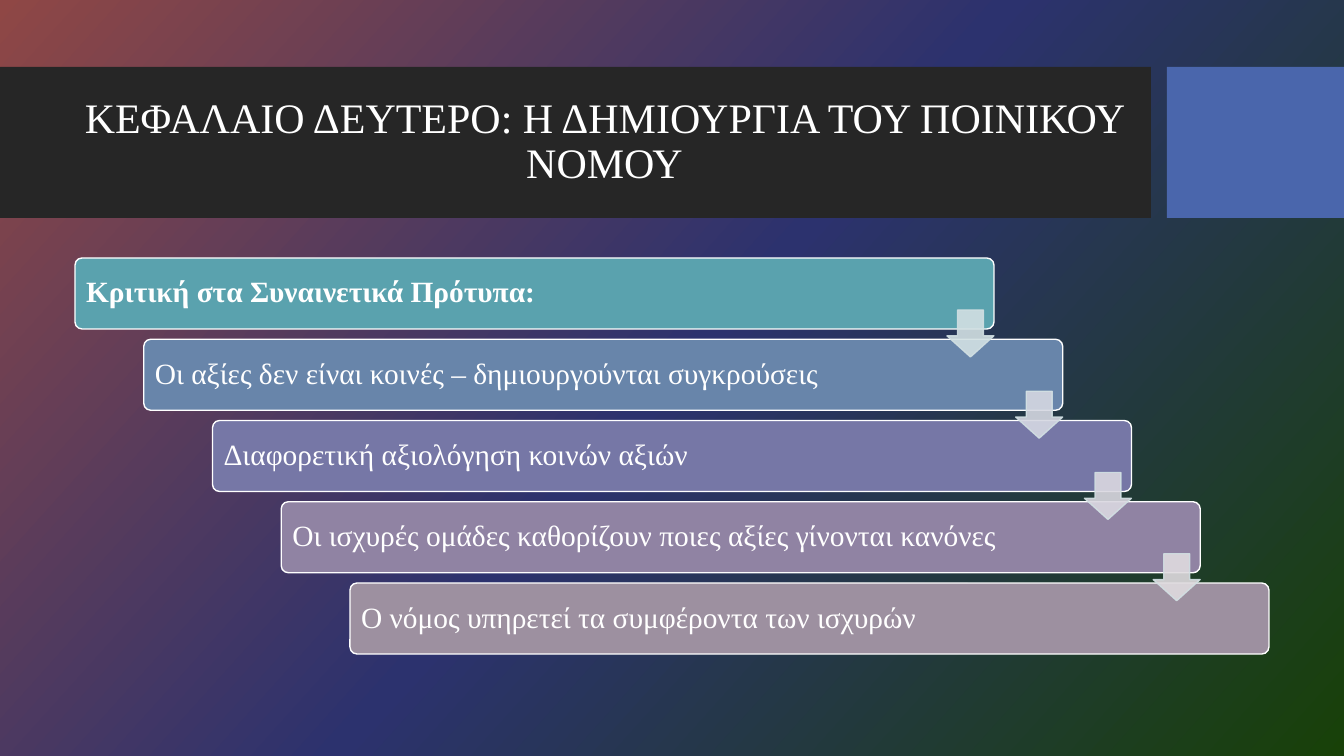
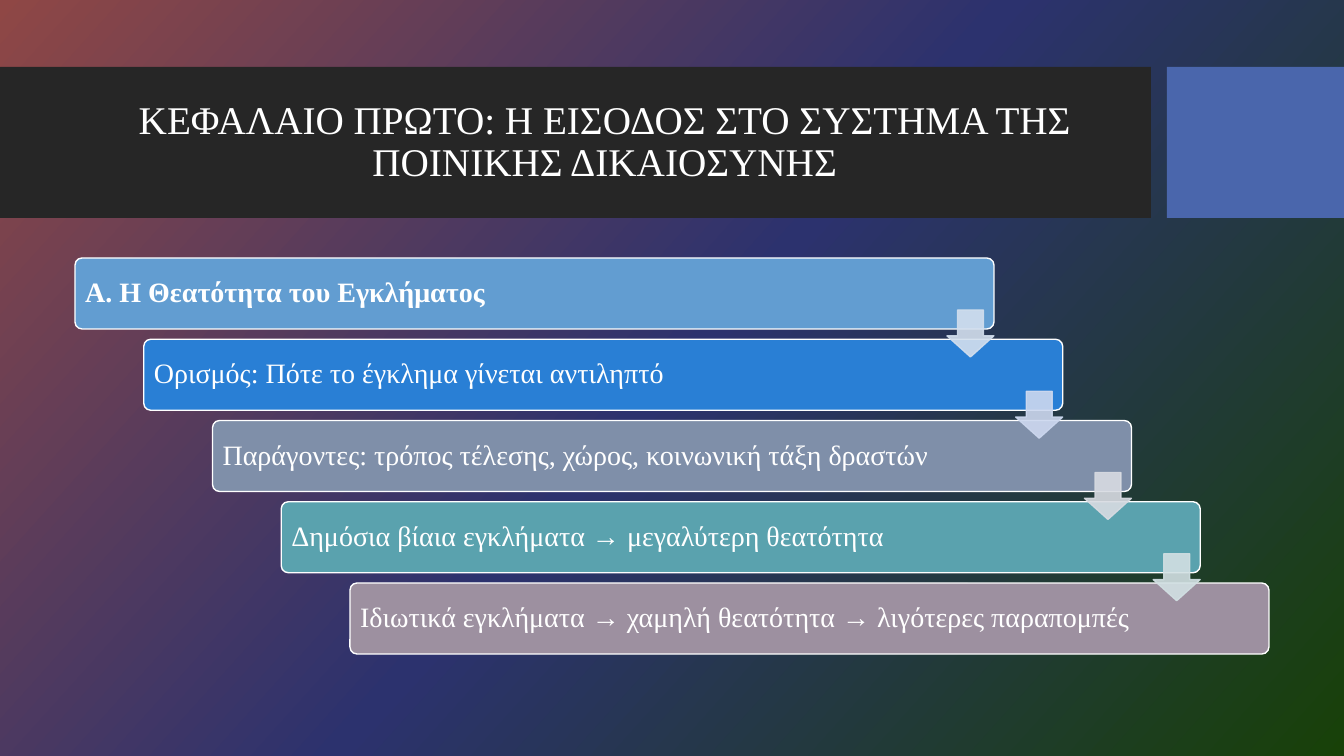
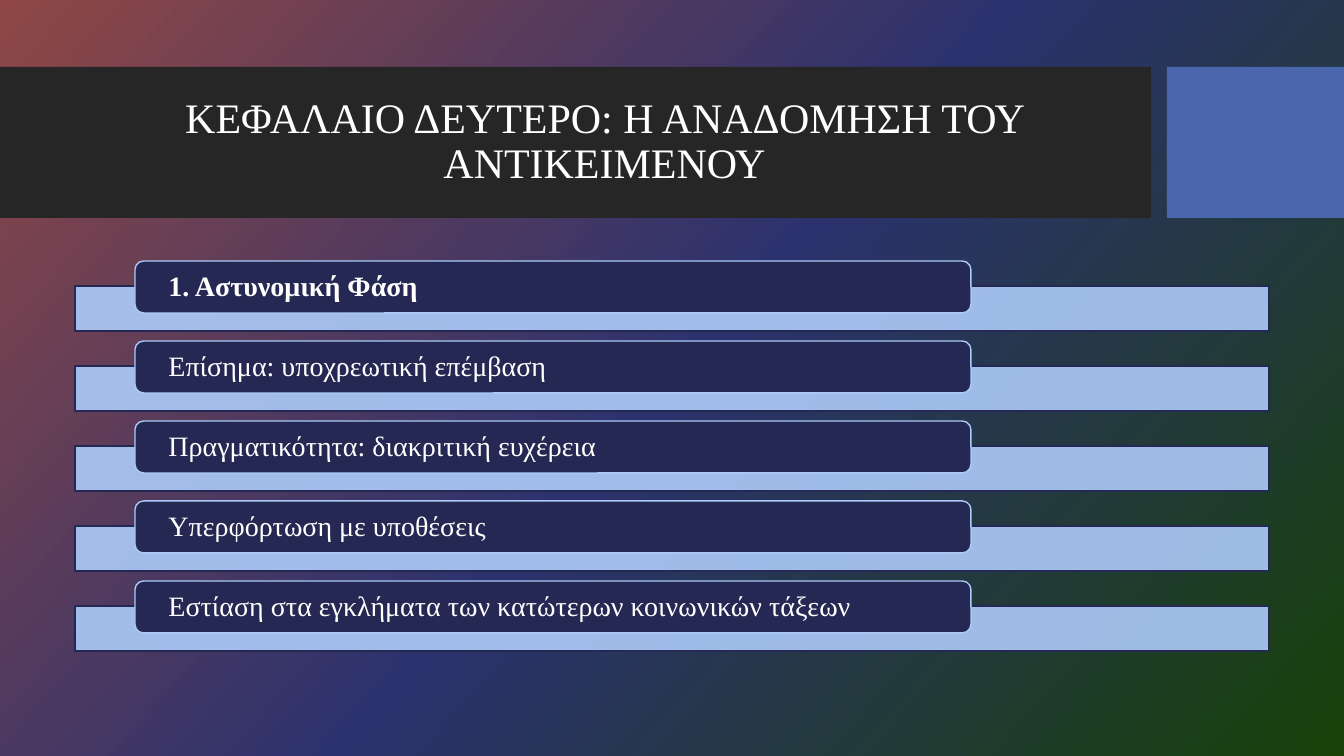
import pptx
import pptx.util
import pptx.dml.color
import pptx.enum.shapes
import pptx.enum.text
import pptx.oxml
import pptx.oxml.ns
import copy

PX = 914400 / 100.8
WIDE, HIGH = 1344, 756
FONT = "Times New Roman"
KIND = pptx.enum.shapes.MSO_SHAPE
ALIGN = pptx.enum.text.PP_ALIGN
MIDDLE = pptx.enum.text.MSO_ANCHOR.MIDDLE

COLOR = {
    "white": "FFFFFF", "band": "262626", "accent": "4A66AC",
    "navy": "242852", "ice": "ACCBF9",
    "teal": "5AA2AE", "steel": "6885AA", "violet": "7677A6",
    "plum": "9083A3", "mauve": "9D90A0",
    "sky": "629DD1", "blue": "297FD5", "slate": "7F8FA9",
    "pale teal": "D2E0E3", "pale steel": "D5D8E2", "pale violet": "DAD8E0",
    "pale plum": "DFDBDF", "pale sky": "D3DFEE", "pale blue": "CDD8EF",
    "pale slate": "D8DBE2",
    "red": "8F4745", "indigo": "2C326E", "green": "184108",
}
BACK = [(0, "red"), (0.5, "indigo"), (1, "green")]
SLOPE = 318

SLIDES = [
    {
        "title": "ΚΕΦΑΛΑΙΟ ΔΕΥΤΕΡΟ: Η ΔΗΜΙΟΥΡΓΙΑ ΤΟΥ ΠΟΙΝΙΚΟΥ ΝΟΜΟΥ",
        "size": 30, "style": "stairs", "text": 21, "inset": 9,
        "items": [
            "Κριτική στα Συναινετικά Πρότυπα:",
            "Οι αξίες δεν είναι κοινές – δημιουργούνται συγκρούσεις",
            "Διαφορετική αξιολόγηση κοινών αξιών",
            "Οι ισχυρές ομάδες καθορίζουν ποιες αξίες γίνονται κανόνες",
            "Ο νόμος υπηρετεί τα συμφέροντα των ισχυρών",
        ],
        "fills": ["teal", "steel", "violet", "plum", "mauve"],
        "arrows": ["pale teal", "pale steel", "pale violet", "pale plum"],
        "edges": ["pale teal"] * 4,
    },
    {
        "title": "ΚΕΦΑΛΑΙΟ ΠΡΩΤΟ: Η ΕΙΣΟΔΟΣ ΣΤΟ ΣΥΣΤΗΜΑ ΤΗΣ ΠΟΙΝΙΚΗΣ ΔΙΚΑΙΟΣΥΝΗΣ",
        "size": 28, "style": "stairs", "text": 20, "inset": 8,
        "items": [
            "Α. Η Θεατότητα του Εγκλήματος",
            "Ορισμός: Πότε το έγκλημα γίνεται αντιληπτό",
            "Παράγοντες: τρόπος τέλεσης, χώρος, κοινωνική τάξη δραστών",
            "Δημόσια βίαια εγκλήματα → μεγαλύτερη θεατότητα",
            "Ιδιωτικά εγκλήματα → χαμηλή θεατότητα → λιγότερες παραπομπές",
        ],
        "fills": ["sky", "blue", "slate", "teal", "mauve"],
        "arrows": ["pale sky", "pale blue", "pale slate", "pale teal"],
        "edges": ["pale sky", "pale blue", "pale slate", "pale teal"],
    },
    {
        "title": "ΚΕΦΑΛΑΙΟ ΔΕΥΤΕΡΟ: Η ΑΝΑΔΟΜΗΣΗ ΤΟΥ ΑΝΤΙΚΕΙΜΕΝΟΥ",
        "size": 30, "style": "tabs", "text": 20, "inset": 31,
        "items": [
            "1. Αστυνομική Φάση",
            "Επίσημα: υποχρεωτική επέμβαση",
            "Πραγματικότητα: διακριτική ευχέρεια",
            "Υπερφόρτωση με υποθέσεις",
            "Εστίαση στα εγκλήματα των κατώτερων κοινωνικών τάξεων",
        ],
    },
]


def emu(px):
    return pptx.util.Emu(round(px * PX))


def rgb(name):
    return pptx.dml.color.RGBColor.from_string(COLOR[name])


def apply(target, values):
    for key, value in values.items():
        setattr(target, key, value)


def fade(shape, part, alpha):
    """Set the opacity, in percent, of a shape's fill or line."""
    route = {"fill": "./a:solidFill/a:srgbClr", "line": "./a:ln/a:solidFill/a:srgbClr"}
    tint = shape.element.spPr.xpath(route[part])[0]
    node = pptx.oxml.parse_xml(
        f'<a:alpha {pptx.oxml.ns.nsdecls("a")} val="{alpha * 1000}"/>')
    tint.append(node)


def draw(slide, kind, place, fill, edge=None, adjust=()):
    shape = slide.shapes.add_shape(kind, *map(emu, place))
    shape.shadow.inherit = False
    shape.fill.solid()
    shape.fill.fore_color.rgb = rgb(fill)
    if edge:
        shape.line.color.rgb = rgb(edge)
        shape.line.width = pptx.util.Pt(1)
    else:
        shape.line.fill.background()
    for spot, value in enumerate(adjust):
        shape.adjustments[spot] = value
    return shape


def write(shape, text, size, align=ALIGN.LEFT, bold=False, inset=0):
    frame = shape.text_frame
    apply(frame, {"word_wrap": True, "vertical_anchor": MIDDLE,
                  "margin_left": emu(inset), "margin_right": emu(inset),
                  "margin_top": 0, "margin_bottom": 0})
    line = frame.paragraphs[0]
    apply(line, {"alignment": align, "line_spacing": 0.9})
    run = line.add_run()
    run.text = text
    apply(run.font, {"name": FONT, "size": pptx.util.Pt(size), "bold": bold})
    run.font.color.rgb = rgb("white")


def paint(master):
    """Give the master the three-colour gradient behind all slides."""
    fill = master.background.fill
    fill.gradient()
    fill.gradient_angle = SLOPE
    stops = master.element.find(".//" + pptx.oxml.ns.qn("a:gsLst"))
    stops.append(copy.deepcopy(stops[-1]))
    for stop, (place, name) in zip(fill.gradient_stops, BACK):
        stop.position = place
        stop.color.rgb = rgb(name)


def head(slide, data):
    draw(slide, KIND.RECTANGLE, (0, 67, 1151, 151), "band")
    draw(slide, KIND.RECTANGLE, (1167, 67, 177, 151), "accent")
    box = slide.shapes.add_textbox(*map(emu, (75, 83, 1059, 119)))
    write(box, data["title"], data["size"], ALIGN.CENTER)


def stairs(slide, data):
    left, top, width, height = 75, 258, 919, 71
    over, down = 275 / 4, 325 / 4
    side, drop = 47, 52
    for row, text in enumerate(data["items"]):
        place = (left + row * over, top + row * down, width, height)
        box = draw(slide, KIND.ROUNDED_RECTANGLE, place,
                   data["fills"][row], "white", (0.1,))
        write(box, text, data["text"], bold=row == 0, inset=data["inset"])
    for row, (fill, edge) in enumerate(zip(data["arrows"], data["edges"])):
        place = (left + row * over + width - side,
                 top + row * down + drop, side, side)
        arrow = draw(slide, KIND.DOWN_ARROW, place, fill, edge, (0.55, 0.45))
        for part in ("fill", "line"):
            fade(arrow, part, 90)


def tabs(slide, data):
    top, step = 261, 80
    for row, text in enumerate(data["items"]):
        y = top + row * step
        bar = draw(slide, KIND.RECTANGLE, (75, y + 25, 1194, 45), "ice", "navy")
        fade(bar, "fill", 90)
        tab = draw(slide, KIND.ROUNDED_RECTANGLE, (135, y, 836, 52), "navy", "ice")
        write(tab, text, data["text"], bold=row == 0, inset=data["inset"])


def main():
    deck = pptx.Presentation()
    apply(deck, {"slide_width": emu(WIDE), "slide_height": emu(HIGH)})
    paint(deck.slide_master)
    styles = {"stairs": stairs, "tabs": tabs}
    for data in SLIDES:
        slide = deck.slides.add_slide(deck.slide_layouts[6])
        head(slide, data)
        styles[data["style"]](slide, data)
    deck.save("out.pptx")


if __name__ == "__main__":
    main()
